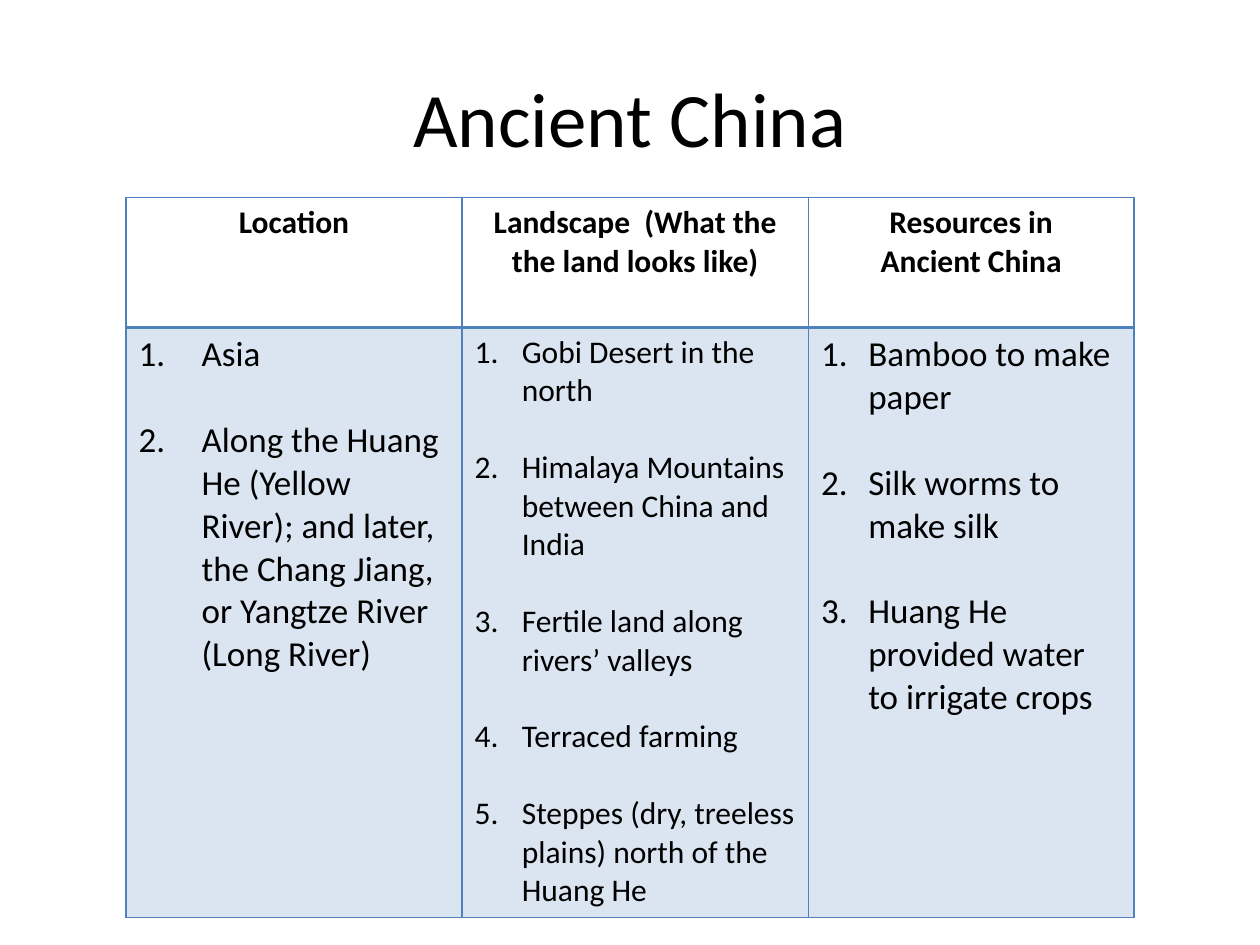
import lxml.etree
import pptx
import pptx.dml.color
import pptx.enum.text
import pptx.oxml.ns
import pptx.util

Pt = pptx.util.Pt
RGBColor = pptx.dml.color.RGBColor
ALIGN = pptx.enum.text.PP_ALIGN
ANCHOR = pptx.enum.text.MSO_ANCHOR
qn = pptx.oxml.ns.qn

BLACK = RGBColor(0, 0, 0)
BLUE = RGBColor(0x4F, 0x81, 0xBD)
FONT = "Calibri"
TINT = 20  # percent opacity of the body cells
LINE = 1.22  # line height relative to the text size

# Column width, heading paragraphs, body size, hanging indent, numbered items
COLUMNS = [
    (192, ["Location"], 20, 36, [
        "Asia",
        "Along the Huang He (Yellow River); and later, the Chang Jiang, "
        "or Yangtze River (Long River)"]),
    (198, ["Landscape  (What the the land looks like)"], 18, 27, [
        "Gobi Desert in the north",
        "Himalaya Mountains between China and India",
        "Fertile land along rivers’ valleys",
        "Terraced farming",
        "Steppes (dry, treeless plains) north of the Huang He"]),
    (186, ["Resources in", "Ancient China"], 20, 27, [
        "Bamboo to make paper",
        "Silk worms to make silk",
        "Huang He provided water to irrigate crops"]),
]
ROW_HEIGHTS = [74.2, 337.2]


def write(tf, texts, size, bold=False, align=ALIGN.LEFT):
    for i, text in enumerate(texts):
        p = tf.paragraphs[0] if i == 0 else tf.add_paragraph()
        p.alignment = align
        r = p.add_run()
        r.text = text
        r.font.color.rgb = BLACK
        for name, value in {"name": FONT, "size": Pt(size), "bold": bold}.items():
            setattr(r.font, name, value)


def number(tf, size, indent):
    """Number the paragraphs and leave one line free between them."""
    for i, p in enumerate(tf.paragraphs):
        if i:
            p.space_before = Pt(size * LINE)
        pPr = p._p.get_or_add_pPr()
        pPr.set("marL", str(Pt(indent)))
        pPr.set("indent", str(-Pt(indent)))
        lxml.etree.SubElement(pPr, qn("a:buFont"), typeface="+mj-lt")
        lxml.etree.SubElement(pPr, qn("a:buAutoNum"), type="arabicPeriod")


def set_borders(cell, top=1, bottom=1):
    tcPr = cell._tc.get_or_add_tcPr()
    for side, width in {"L": 1, "R": 1, "T": top, "B": bottom}.items():
        ln = lxml.etree.SubElement(tcPr, qn("a:ln" + side), w=str(Pt(width)))
        fill = lxml.etree.SubElement(ln, qn("a:solidFill"))
        lxml.etree.SubElement(fill, qn("a:srgbClr"), val=str(BLUE))


def tint(cell):
    cell.fill.solid()
    cell.fill.fore_color.rgb = BLUE
    clr = cell._tc.tcPr.find(qn("a:solidFill")).find(qn("a:srgbClr"))
    lxml.etree.SubElement(clr, qn("a:alpha"), val=str(TINT * 1000))


def add_title(s, x, y, w, h):
    tf = s.shapes.add_textbox(Pt(x), Pt(y), Pt(w), Pt(h)).text_frame
    tf.word_wrap = True
    tf.vertical_anchor = ANCHOR.MIDDLE
    write(tf, ["Ancient China"], 44, align=ALIGN.CENTER)


def add_facts(s, x, y, w, h):
    table = s.shapes.add_table(
        len(ROW_HEIGHTS), len(COLUMNS), Pt(x), Pt(y), Pt(w), Pt(h)).table
    for name in ("first_row", "horz_banding"):
        setattr(table, name, False)
    for row, height in zip(table.rows, ROW_HEIGHTS):
        row.height = Pt(height)
    for c, (width, heading, size, indent, items) in enumerate(COLUMNS):
        table.columns[c].width = Pt(width)
        # Heading cell
        head = table.cell(0, c)
        set_borders(head, bottom=2)
        head.fill.background()
        write(head.text_frame, heading, 18, True, ALIGN.CENTER)
        # Numbered list cell
        body = table.cell(1, c)
        set_borders(body, top=2)
        tint(body)
        write(body.text_frame, items, size)
        number(body.text_frame, size, indent)


def main():
    prs = pptx.Presentation()
    prs.slide_width, prs.slide_height = Pt(720), Pt(540)
    s = prs.slides.add_slide(prs.slide_layouts[6])
    add_title(s, 36, 21.6, 648, 90)
    add_facts(s, 72, 112.8, sum(col[0] for col in COLUMNS), sum(ROW_HEIGHTS))
    prs.save("out.pptx")


if __name__ == "__main__":
    main()
